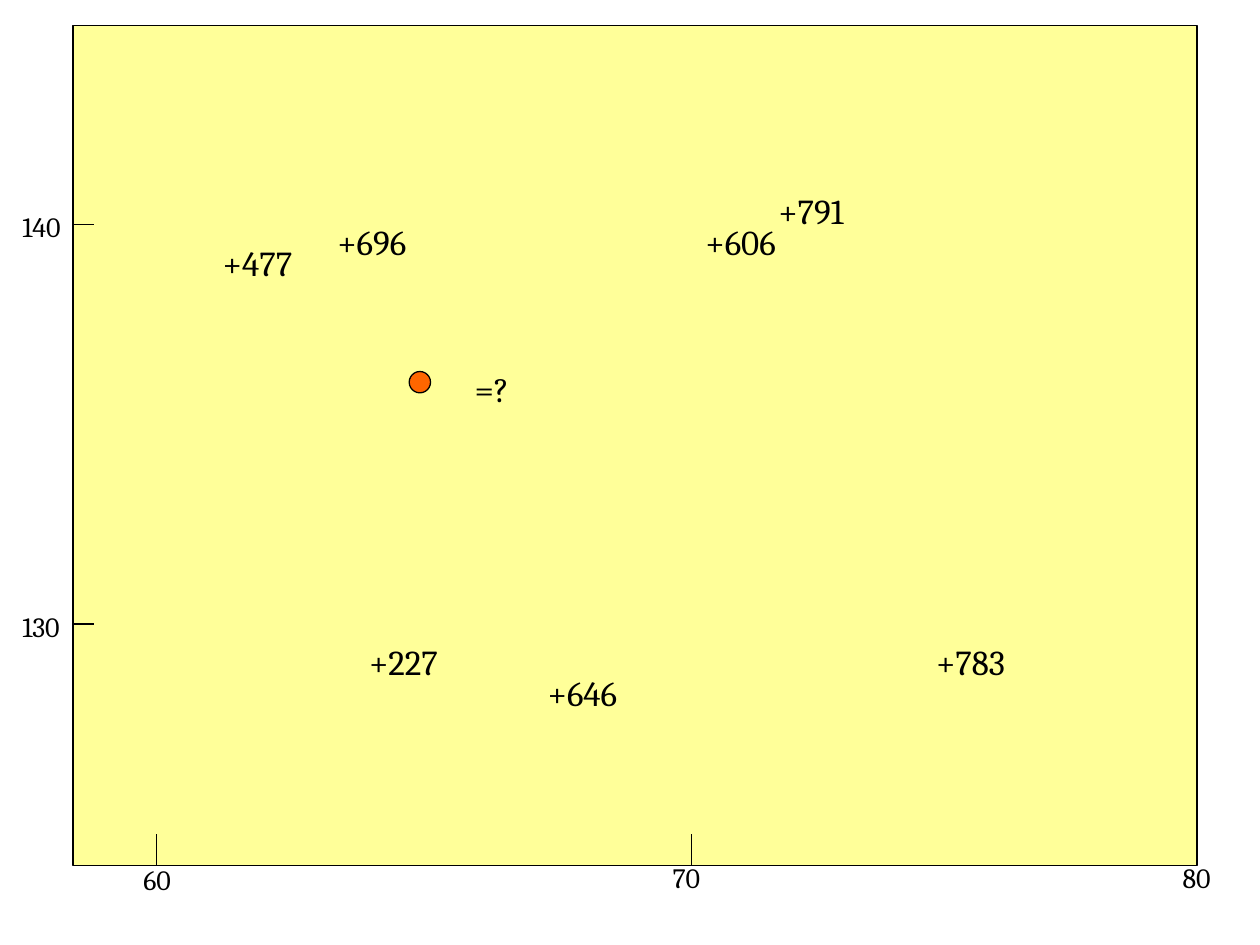
from lxml import etree
from pptx import Presentation
from pptx.dml.color import RGBColor
from pptx.enum.shapes import MSO_CONNECTOR, MSO_SHAPE
from pptx.enum.text import MSO_AUTO_SIZE
from pptx.oxml.ns import qn
from pptx.util import Cm, Pt

STRAIGHT = MSO_CONNECTOR.STRAIGHT
RECT, OVAL = MSO_SHAPE.RECTANGLE, MSO_SHAPE.OVAL
FIT = MSO_AUTO_SIZE.SHAPE_TO_FIT_TEXT

BLACK, YELLOW, ORANGE = "000000", "FFFF99", "FF6600"

# Lengths in cm, measured from the top left corner of the plot
PLOT = (1.47, 0.51, 22.66, 16.94)
Y_TICKS = [("140", 4.01), ("130", 12.07)]
# text, tick (None at the frame's edge), left and top of label
X_TICKS = [("60", 1.68, 1.17, 16.76), ("70", 12.47, 11.84, 16.71),
           ("80", None, 22.12, 16.71)]
POINTS = [("+477", 2.77, 4.24), ("+696", 5.08, 3.81), ("+227", 5.72, 12.27),
          ("+646", 9.32, 12.9), ("+606", 12.5, 3.81), ("+791", 13.97, 3.18),
          ("+783", 17.15, 12.27)]


def color(code):
    return RGBColor.from_string(code)


def add_text(slide, text, x, y, w, h, size=20, font="Cambria", ink=BLACK):
    box = slide.shapes.add_textbox(Cm(x), Cm(y), Cm(w), Cm(h))
    frame = box.text_frame
    frame.word_wrap = False
    frame.auto_size = FIT
    run = frame.paragraphs[0].add_run()
    run.text = text
    run.font.size = Pt(size)
    run.font.name = font
    run.font.color.rgb = color(ink)


def add_shape(slide, kind, x, y, w, h, fill):
    shape = slide.shapes.add_shape(kind, Cm(x), Cm(y), Cm(w), Cm(h))
    shape.shadow.inherit = False
    shape.fill.solid()
    shape.fill.fore_color.rgb = color(fill)
    shape.line.color.rgb = color(BLACK)
    shape.line.width = Pt(0.75)


def add_tick(slide, x, y, dx=0, dy=0):
    tick = slide.shapes.add_connector(
        STRAIGHT, Cm(x), Cm(y), Cm(x + dx), Cm(y + dy))
    tick.line.color.rgb = color(BLACK)
    tick.line.width = Pt(0.75)
    etree.SubElement(tick._element.spPr, qn("a:effectLst"))


def add_axes(slide, left, top, width, height):
    add_shape(slide, RECT, left, top, width, height, YELLOW)
    for text, y in Y_TICKS:
        add_tick(slide, left, top + y, dx=0.42)
        add_text(slide, text, left - 1.27, top + y - 0.42, 1.35, 0.94, size=16)
    for text, x, label_x, label_y in X_TICKS:
        if x is not None:
            add_tick(slide, left + x, top + height, dy=-0.63)
        add_text(slide, text, left + label_x, top + label_y, 1.07, 0.94,
                 size=16)


def add_points(slide, left, top):
    for text, x, y in POINTS:
        add_text(slide, text, left + x, top + y, 1.96, 1.09)
    add_shape(slide, OVAL, left + 6.78, top + 6.98, 0.43, 0.43, ORANGE)
    add_text(slide, "=?", left + 7.85, top + 6.78, 1.22, 1.09)


def main():
    deck = Presentation()
    deck.slide_width, deck.slide_height = Cm(25.4), Cm(19.05)
    slide = deck.slides.add_slide(deck.slide_layouts[6])
    add_axes(slide, *PLOT)
    add_points(slide, *PLOT[:2])
    deck.save("out.pptx")


if __name__ == "__main__":
    main()
